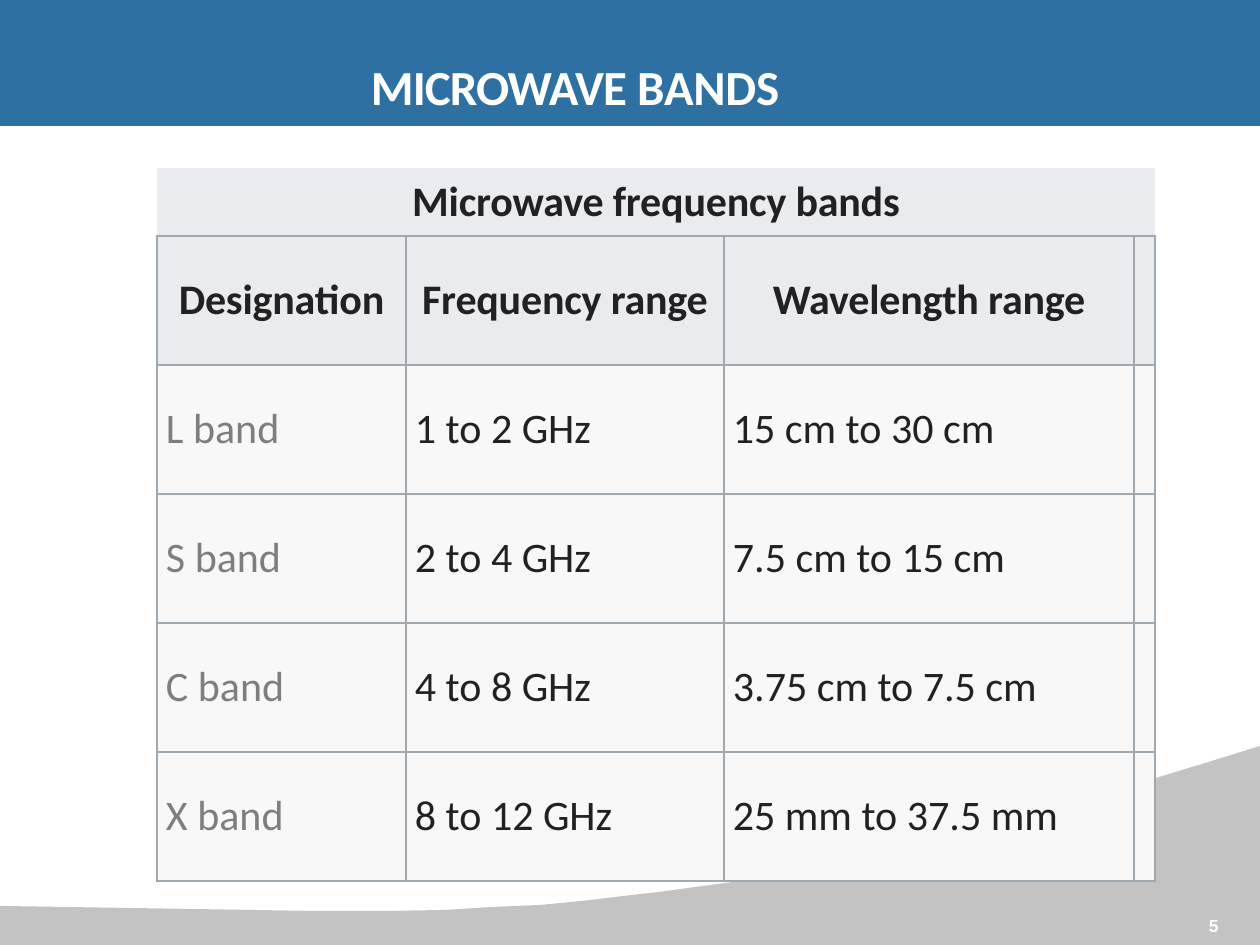
from dataclasses import dataclass

from lxml.etree import SubElement
from pptx import Presentation
from pptx.dml.color import RGBColor
from pptx.enum.shapes import MSO_SHAPE
from pptx.enum.text import MSO_ANCHOR, PP_ALIGN
from pptx.oxml import parse_xml
from pptx.oxml.ns import nsdecls, qn
from pptx.util import Pt

PX = 914400 / 126
NO_STYLE = "{2D5ABB26-0587-4C30-8999-92F81FD0307C}"


@dataclass(frozen=True)
class Theme:
    banner: str = "2E70A1"
    wave: str = "7B7B7B"
    white: str = "FFFFFF"
    ink: str = "212121"
    muted: str = "7E7E7E"
    header_fill: str = "EAEBEF"
    body_fill: str = "F8F8F9"
    border: str = "A1A9B0"
    font: str = "Calibri"
    number_font: str = "Arial"
    title_size: int = 28
    table_size: int = 24
    number_size: int = 10


THEME = Theme()
COLUMN_WIDTHS = [249, 318, 410, 21]
ROW_HEIGHTS = [68] + [129] * 5
TABLE_TITLE = "Microwave frequency bands"
HEADINGS = ["Designation", "Frequency range", "Wavelength range"]
BANDS = [
    ["L band", "1 to 2 GHz", "15 cm to 30 cm"],
    ["S band", "2 to 4 GHz", "7.5 cm to 15 cm"],
    ["C band", "4 to 8 GHz", "3.75 cm to 7.5 cm"],
    ["X band", "8 to 12 GHz", "25 mm to 37.5 mm"],
]
WAVE_EDGE = [
    (0, 906), (314, 911), (389, 911), (445, 910), (493, 907), (541, 905),
    (582, 901), (624, 896), (667, 891), (703, 886), (741, 881), (785, 872),
    (830, 863), (877, 853), (926, 842), (983, 828), (1051, 809),
    (1130, 786), (1225, 757), (1260, 746), (1260, 945), (0, 945),
]


def px(value):
    return round(value * PX)


def apply(target, values):
    for name, value in values.items():
        setattr(target, name, value)


def paint(shape, color):
    shape.shadow.inherit = False
    shape.fill.solid()
    shape.fill.fore_color.rgb = RGBColor.from_string(color)
    shape.line.fill.background()


def add_run(paragraph, text, size, color, bold=False, font=THEME.font, spacing=0):
    run = paragraph.add_run()
    run.text = text
    apply(run.font, {"name": font, "size": Pt(size), "bold": bold})
    run.font.color.rgb = RGBColor.from_string(color)
    if spacing:
        run.font._element.set("spc", str(spacing))


def add_banner(slide):
    banner = slide.shapes.add_shape(MSO_SHAPE.RECTANGLE, 0, 0, px(1260), px(126))
    paint(banner, THEME.banner)


def add_wave(slide):
    builder = slide.shapes.build_freeform(*WAVE_EDGE[0], scale=PX)
    builder.add_line_segments(WAVE_EDGE[1:], close=True)
    wave = builder.convert_to_shape()
    paint(wave, THEME.wave)
    color = wave._element.spPr.find(qn("a:solidFill"))[0]
    SubElement(color, qn("a:alpha"), val="45000")


def add_text(slide, box, runs, **style):
    shape = slide.shapes.add_textbox(*map(px, box))
    frame = shape.text_frame
    apply(frame, {
        "word_wrap": True, "margin_left": px(3), "margin_right": 0,
        "margin_top": 0, "margin_bottom": 0,
    })
    for text, spacing in runs:
        add_run(frame.paragraphs[0], text, spacing=spacing, bold=True,
                color=THEME.white, **style)


def add_borders(cell, sides):
    properties = cell._tc.get_or_add_tcPr()
    for index, side in enumerate(sides):
        properties.insert(index, parse_xml(
            f'<a:ln{side} {nsdecls("a")} w="12700"><a:solidFill>'
            f'<a:srgbClr val="{THEME.border}"/></a:solidFill></a:ln{side}>'
        ))


def format_cell(cell, text, fill, color, header, sides):
    cell.fill.solid()
    cell.fill.fore_color.rgb = RGBColor.from_string(fill)
    apply(cell, {
        "margin_left": 0 if header else px(9), "margin_right": 0,
        "margin_top": 0, "margin_bottom": 0,
        "vertical_anchor": MSO_ANCHOR.MIDDLE,
    })
    if text:
        paragraph = cell.text_frame.paragraphs[0]
        paragraph.alignment = PP_ALIGN.CENTER if header else PP_ALIGN.LEFT
        add_run(paragraph, text, THEME.table_size, color, header,
                spacing=-10 if header else 0)
    add_borders(cell, sides)


def add_band_table(slide):
    rows = [[TABLE_TITLE, "", ""], HEADINGS] + BANDS
    frame = slide.shapes.add_table(
        len(rows), len(COLUMN_WIDTHS), px(157), px(168),
        px(sum(COLUMN_WIDTHS)), px(sum(ROW_HEIGHTS)))
    table = frame.table
    table._tbl.tblPr.find(qn("a:tableStyleId")).text = NO_STYLE
    for column, width in zip(table.columns, COLUMN_WIDTHS):
        column.width = px(width)
    for row, height in zip(table.rows, ROW_HEIGHTS):
        row.height = px(height)
    for row_index, texts in enumerate(rows):
        header = row_index < 2
        fill = THEME.header_fill if header else THEME.body_fill
        sides = "LRTB" if row_index else "B"
        for column_index, text in enumerate(texts + [""]):
            muted = column_index == 0 and not header
            format_cell(table.cell(row_index, column_index), text, fill,
                        THEME.muted if muted else THEME.ink, header, sides)
    table.cell(0, 0).merge(table.cell(0, len(COLUMN_WIDTHS) - 1))


def main():
    presentation = Presentation()
    apply(presentation, {"slide_width": px(1260), "slide_height": px(945)})
    slide = presentation.slides.add_slide(presentation.slide_layouts[6])
    add_wave(slide)
    add_banner(slide)
    add_text(slide, (368, 57, 421, 62), [("MICROWAVE ", -50), ("BANDS", -10)],
             size=THEME.title_size)
    add_band_table(slide)
    add_text(slide, (1206, 915, 30, 23), [("5", -10)],
             size=THEME.number_size, font=THEME.number_font)
    presentation.save("out.pptx")


if __name__ == "__main__":
    main()
